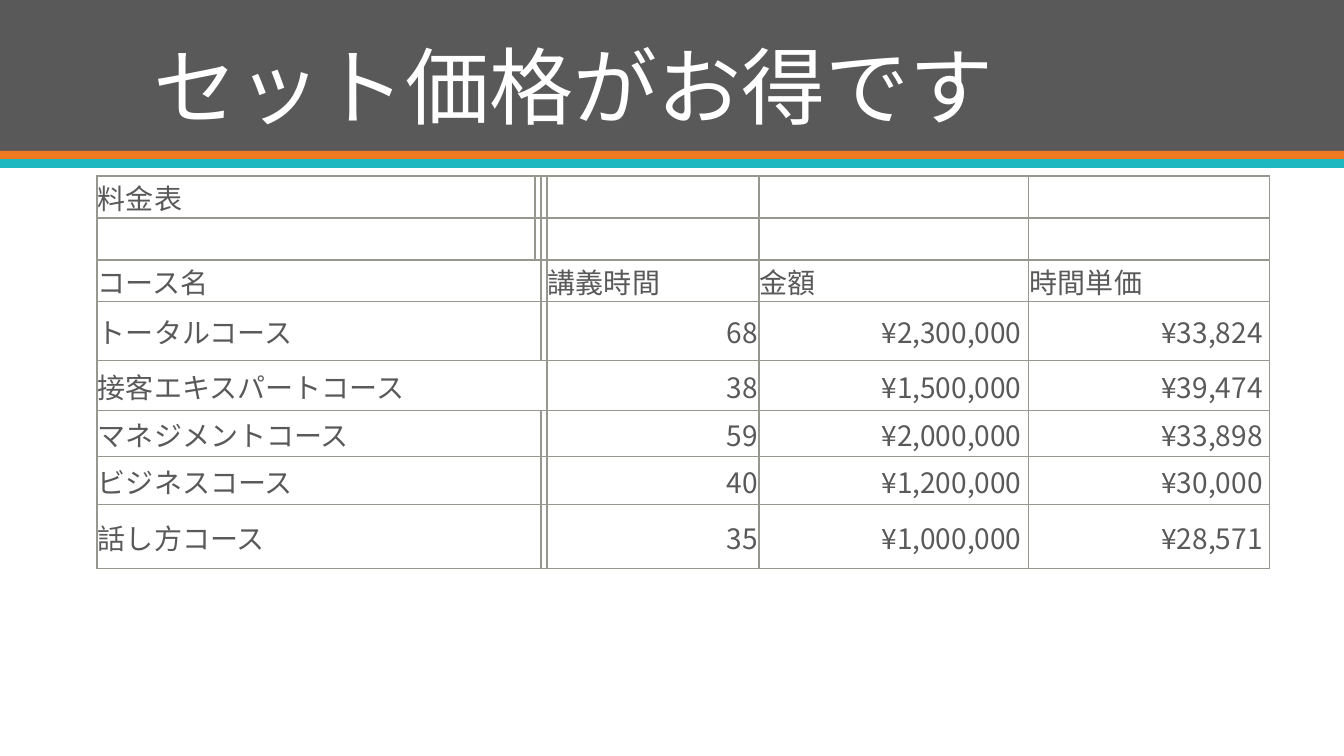
"""Build the course price list slide."""
from dataclasses import dataclass

from lxml.etree import SubElement
from pptx import Presentation
from pptx.dml.color import RGBColor
from pptx.enum.shapes import MSO_SHAPE as Shape
from pptx.enum.text import MSO_ANCHOR as Anchor, MSO_AUTO_SIZE as AutoSize, PP_ALIGN as Align
from pptx.oxml.ns import qn
from pptx.util import Pt

TITLE = "セット価格がお得です"
HEADINGS = [
    ("料金表", "", "", ""),
    ("", "", "", ""),
    ("コース名", "講義時間", "金額", "時間単価"),
]
COURSES = [
    ("トータルコース", "68", "¥2,300,000 ", "¥33,824 "),
    ("接客エキスパートコース", "38", "¥1,500,000 ", "¥39,474 "),
    ("マネジメントコース", "59", "¥2,000,000 ", "¥33,898 "),
    ("ビジネスコース", "40", "¥1,200,000 ", "¥30,000 "),
    ("話し方コース", "35", "¥1,000,000 ", "¥28,571 "),
]
NAME_SPANS = [1, 1, 2, 2, 3, 2, 2, 2]
COLUMN_WIDTHS = [438, 6, 6, 212, 270, 241]
ROW_HEIGHTS = [42, 42, 41, 59, 50, 46, 48, 64]
TABLE_LEFT, TABLE_TOP = 97, 176
SLIDE_WIDTH, SLIDE_HEIGHT = 1344, 756
TITLE_BOX = (143, 28, 1058, 114)


@dataclass(frozen=True)
class Theme:
    """Colours, type sizes and font."""
    gray: str = "595959"
    orange: str = "EF7920"
    teal: str = "1EB8C1"
    white: str = "FFFFFF"
    border: str = "969890"
    title_size: int = 60
    table_size: int = 20
    font: str = "Noto Sans CJK JP"


THEME = Theme()
BANDS = [(151, THEME.gray), (8, THEME.orange), (9, THEME.teal)]


def px(length):
    """Turn pixels into EMU."""
    return round(length * 914400 / 100.8)


def add_run(paragraph, text, size, color):
    """Add one formatted run."""
    run = paragraph.add_run()
    run.text = text
    run.font.size = Pt(size)
    run.font.name = THEME.font
    run.font.color.rgb = RGBColor.from_string(color)
    SubElement(run.font._element, qn("a:ea"), typeface=THEME.font)


def add_bands(slide):
    """Stack the full-width header bands."""
    top = 0
    for height, color in BANDS:
        band = slide.shapes.add_shape(Shape.RECTANGLE, 0, px(top), px(SLIDE_WIDTH), px(height))
        band.shadow.inherit = False
        band.fill.solid()
        band.fill.fore_color.rgb = RGBColor.from_string(color)
        band.line.fill.background()
        top += height


def format_title(slide):
    """Place the title above the bands."""
    title = slide.shapes.title
    slide.shapes._spTree.append(title._element)
    title.left, title.top, title.width, title.height = map(px, TITLE_BOX)
    frame = title.text_frame
    frame.auto_size = AutoSize.NONE
    frame.word_wrap = True
    frame.vertical_anchor = Anchor.BOTTOM
    paragraph = frame.paragraphs[0]
    paragraph.alignment = Align.LEFT
    paragraph.line_spacing = 0.9
    add_run(paragraph, TITLE, THEME.title_size, THEME.white)


def format_cell(cell):
    """Give a cell its borders, white fill and tight margins."""
    properties = cell._tc.get_or_add_tcPr()
    for side in ("a:lnL", "a:lnR", "a:lnT", "a:lnB"):
        line = SubElement(properties, qn(side), w=str(Pt(1)))
        fill = SubElement(line, qn("a:solidFill"))
        SubElement(fill, qn("a:srgbClr"), val=THEME.border)
    cell.fill.solid()
    cell.fill.fore_color.rgb = RGBColor.from_string(THEME.white)
    cell.margin_left = cell.margin_right = cell.margin_top = px(1)
    cell.margin_bottom = 0
    cell.vertical_anchor = Anchor.MIDDLE


def write_cell(cell, text, alignment):
    """Write text, or keep an empty cell at the table's type size."""
    paragraph = cell.text_frame.paragraphs[0]
    paragraph.alignment = alignment
    if text:
        add_run(paragraph, text, THEME.table_size, THEME.gray)
    else:
        SubElement(paragraph._p, qn("a:endParaRPr"), sz=str(THEME.table_size * 100))


def add_price_table(slide):
    """Add the price table with its merged course names."""
    frame = slide.shapes.add_table(
        len(ROW_HEIGHTS), len(COLUMN_WIDTHS), px(TABLE_LEFT), px(TABLE_TOP),
        px(sum(COLUMN_WIDTHS)), px(sum(ROW_HEIGHTS)))
    table = frame.table
    table.first_row = table.horz_banding = False
    for column, width in zip(table.columns, COLUMN_WIDTHS):
        column.width = px(width)
    for row, height in zip(table.rows, ROW_HEIGHTS):
        row.height = px(height)
    for row, (name, *values) in enumerate(HEADINGS + COURSES):
        value_alignment = Align.LEFT if row < len(HEADINGS) else Align.RIGHT
        for column, text in enumerate([name, "", "", *values]):
            cell = table.cell(row, column)
            format_cell(cell)
            write_cell(cell, text, value_alignment if column else Align.LEFT)
        if NAME_SPANS[row] > 1:
            table.cell(row, 0).merge(table.cell(row, NAME_SPANS[row] - 1))


def main():
    """Create and save the presentation."""
    presentation = Presentation()
    presentation.slide_width, presentation.slide_height = px(SLIDE_WIDTH), px(SLIDE_HEIGHT)
    slide = presentation.slides.add_slide(presentation.slide_layouts[5])
    add_bands(slide)
    format_title(slide)
    add_price_table(slide)
    presentation.save("out.pptx")


if __name__ == "__main__":
    main()
